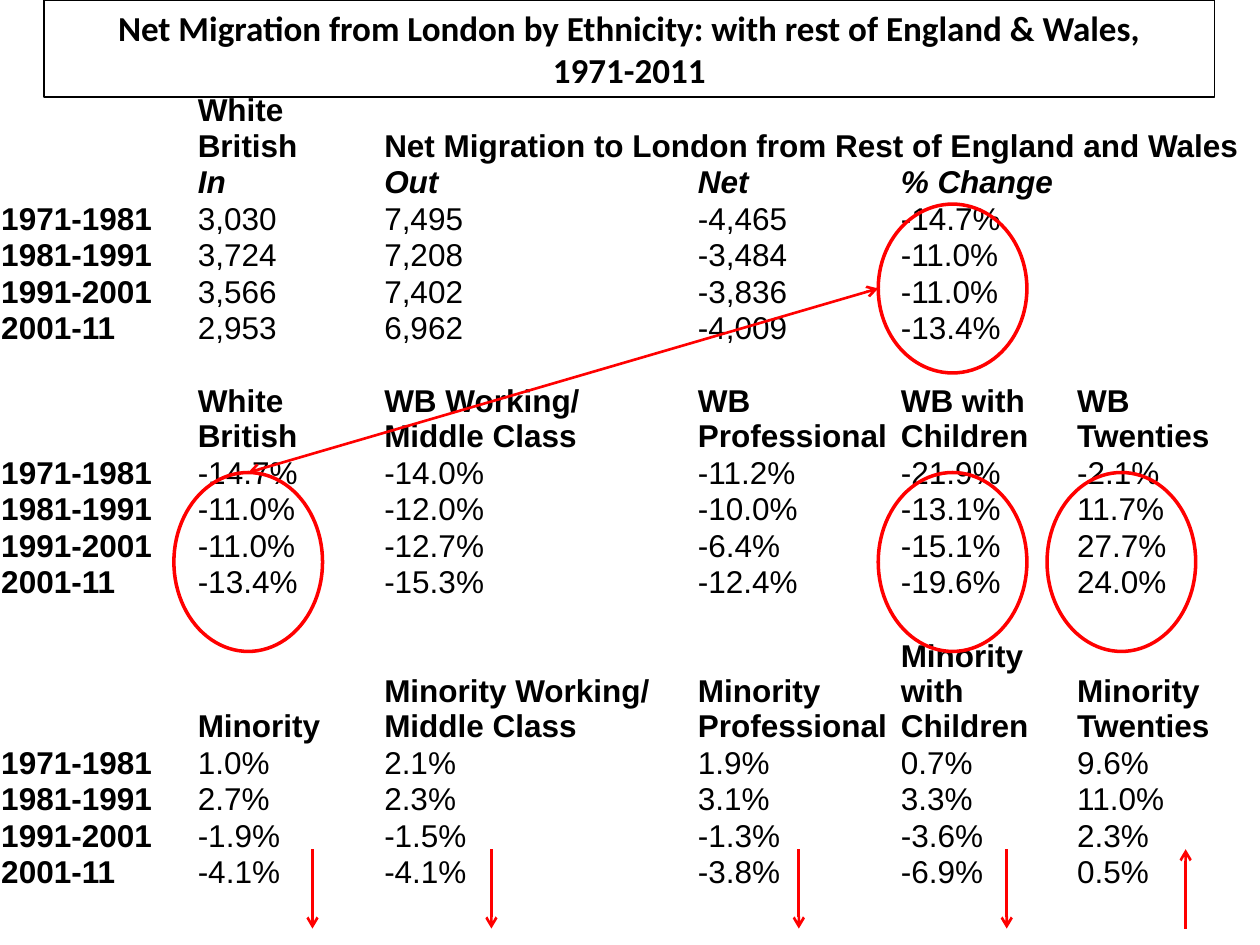
from lxml import etree
from pptx import Presentation
from pptx.dml.color import RGBColor
from pptx.enum.shapes import MSO_CONNECTOR as CONNECTOR, MSO_SHAPE as SHAPE
from pptx.enum.text import MSO_ANCHOR as ANCHOR, MSO_AUTO_SIZE as AUTO_SIZE, PP_ALIGN as ALIGN
from pptx.oxml.ns import qn
from pptx.util import Inches, Pt

BLACK = RGBColor(0x00, 0x00, 0x00)
RED = RGBColor(0xFF, 0x00, 0x00)
NO_GRID_STYLE = "{2D5ABB26-0587-4C30-8999-92F81FD0307C}"

DECADES = ["1971-1981", "1981-1991", "1991-2001", "2001-11"]
COLUMN_WIDTHS = [1.56, 1.48, 2.49, 1.61, 1.4, 1.47]
LINE_HEIGHTS = {1: 0.29, 2: 0.57, 3: 0.85}

# Each block: header, lines in its header, values per decade
FLOWS = (["White British", "Net Migration to London from Rest of England and Wales"], 2, [
    ["3,030", "7,495", "-4,465", "-14.7%"],
    ["3,724", "7,208", "-3,484", "-11.0%"],
    ["3,566", "7,402", "-3,836", "-11.0%"],
    ["2,953", "6,962", "-4,009", "-13.4%"],
])
FLOW_SUBHEADS = ["In", "Out", "Net", "% Change"]
WHITE_BRITISH = (["White British", "WB Working/\nMiddle Class", "WB Professional",
                  "WB with Children", "WB Twenties"], 2, [
    ["-14.7%", "-14.0%", "-11.2%", "-21.9%", "-2.1%"],
    ["-11.0%", "-12.0%", "-10.0%", "-13.1%", "11.7%"],
    ["-11.0%", "-12.7%", "-6.4%", "-15.1%", "27.7%"],
    ["-13.4%", "-15.3%", "-12.4%", "-19.6%", "24.0%"],
])
MINORITY = (["Minority", "Minority Working/\nMiddle Class", "Minority Professional",
             "Minority with Children", "Minority Twenties"], 3, [
    ["1.0%", "2.1%", "1.9%", "0.7%", "9.6%"],
    ["2.7%", "2.3%", "3.1%", "3.3%", "11.0%"],
    ["-1.9%", "-1.5%", "-1.3%", "-3.6%", "2.3%"],
    ["-4.1%", "-4.1%", "-3.8%", "-6.9%", "0.5%"],
])


def write(frame, text, font="Arial", size=18, bold=False, italic=False, align=None):
    """Fill a text frame, one paragraph per line of text."""
    for number, line in enumerate(text.split("\n")):
        paragraph = frame.add_paragraph() if number else frame.paragraphs[0]
        if align is not None:
            paragraph.alignment = align
        if line:
            run = paragraph.add_run()
            run.text = line
            run.font.name, run.font.size = font, Pt(size)
            run.font.bold, run.font.italic = bold, italic
            run.font.color.rgb = BLACK
        else:
            # An empty cell still takes its height from its font
            end = etree.SubElement(paragraph._p, qn("a:endParaRPr"), sz=str(size * 100))
            etree.SubElement(end, qn("a:latin"), typeface=font)


def add_title(slide, left, top, width, height):
    title = slide.shapes.title
    title.left, title.top = Inches(left), Inches(top)
    title.width, title.height = Inches(width), Inches(height)
    title.line.color.rgb = BLACK
    title.line.width = Pt(0.75)
    frame = title.text_frame
    frame.word_wrap = True
    frame.auto_size = AUTO_SIZE.NONE
    frame.vertical_anchor = ANCHOR.MIDDLE
    write(frame, "Net Migration from London by Ethnicity: with rest of England & Wales,\n1971-2011",
          font="Calibri", size=20, bold=True, align=ALIGN.CENTER)


def table_rows():
    """Return (cells, line count, style) for every row of the table."""
    rows = []
    for headers, lines, values in (FLOWS, WHITE_BRITISH, MINORITY):
        if rows:
            rows.append(([], 1, {}))
        rows.append(([""] + headers, lines, {"bold": True}))
        if headers is FLOWS[0]:
            rows.append(([""] + FLOW_SUBHEADS, 1, {"bold": True, "italic": True}))
        rows += [([decade] + cells, 1, {}) for decade, cells in zip(DECADES, values)]
    return rows


def add_migration_table(slide, left, top, width):
    rows = table_rows()
    height = sum(LINE_HEIGHTS[lines] for _, lines, _ in rows)
    table = slide.shapes.add_table(len(rows), len(COLUMN_WIDTHS), Inches(left), Inches(top),
                                   Inches(width), Inches(height)).table
    table.first_row = table.horz_banding = False
    table._tbl.tblPr.find(qn("a:tableStyleId")).text = NO_GRID_STYLE
    for column, column_width in zip(table.columns, COLUMN_WIDTHS):
        column.width = Inches(column_width)
    for row, (texts, lines, style) in zip(table.rows, rows):
        row.height = Inches(LINE_HEIGHTS[lines])
        for index, cell in enumerate(row.cells):
            cell.fill.background()
            cell.vertical_anchor = ANCHOR.BOTTOM
            cell.margin_left = cell.margin_right = Inches(0.01)
            cell.margin_top, cell.margin_bottom = Pt(0.5), 0
            text = texts[index] if index < len(texts) else ""
            write(cell.text_frame, text, **{"bold": index == 0, **style})
    # The flow heading runs over the last four columns
    table.cell(0, 2).merge(table.cell(0, 5))


def add_ring(slide, left, top, width, height):
    ring = slide.shapes.add_shape(SHAPE.OVAL, Inches(left), Inches(top),
                                  Inches(width), Inches(height))
    ring.shadow.inherit = False
    ring.fill.background()
    ring.line.color.rgb = RED
    ring.line.width = Pt(2)


def add_arrow(slide, start, end, both_ends=False):
    arrow = slide.shapes.add_connector(CONNECTOR.STRAIGHT, *map(Inches, start + end))
    arrow.line.color.rgb = RED
    arrow.line.width = Pt(1.5)
    line = arrow.line._get_or_add_ln()
    for tag in ["a:headEnd", "a:tailEnd"] if both_ends else ["a:tailEnd"]:
        etree.SubElement(line, qn(tag), type="arrow")
    etree.SubElement(arrow._element.spPr, qn("a:effectLst"))


def add_highlights(slide):
    """Ring the compared figures and link the two equal series."""
    ring_width, flow_top, share_top = 1.18, 1.62, 3.75
    flow_height, share_height = 1.34, 1.42
    white_british_left, children_left, twenties_left = 1.38, 6.97, 8.31
    add_ring(slide, children_left, flow_top, ring_width, flow_height)
    for left in (children_left, twenties_left, white_british_left):
        add_ring(slide, left, share_top, ring_width, share_height)
    add_arrow(slide, (children_left, flow_top + flow_height / 2),
              (white_british_left + ring_width / 2, share_top), both_ends=True)


def add_trend_arrows(slide, top, bottom):
    for x in (2.48, 3.9, 6.34, 7.99):
        add_arrow(slide, (x, top), (x, bottom))
    twenties_x = 9.41
    add_arrow(slide, (twenties_x, bottom), (twenties_x, top))


def main():
    deck = Presentation()
    deck.slide_width, deck.slide_height = Inches(10), Inches(7.5)
    slide = deck.slides.add_slide(deck.slide_layouts[5])
    add_title(slide, 0.35, 0, 9.29, 0.77)
    add_migration_table(slide, 0, 0.73, 10)
    add_highlights(slide)
    add_trend_arrows(slide, 6.74, 7.37)
    deck.save("out.pptx")


if __name__ == "__main__":
    main()
